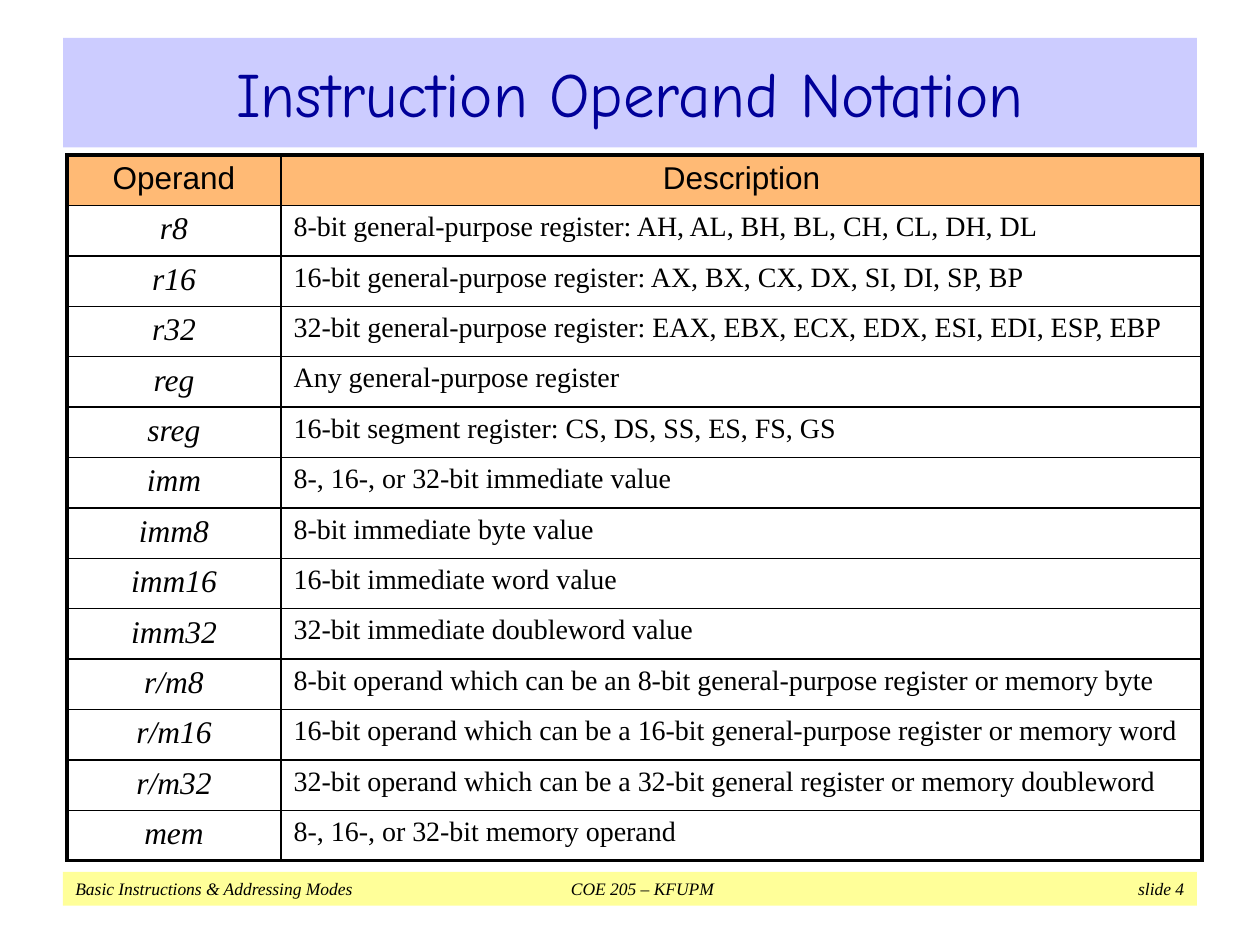
from dataclasses import dataclass
from typing import NamedTuple

from lxml.etree import SubElement
from pptx import Presentation
from pptx.dml.color import RGBColor as Color
from pptx.enum.shapes import MSO_SHAPE as ShapeKind
from pptx.enum.text import MSO_ANCHOR as Anchor, PP_ALIGN as Align
from pptx.oxml.ns import qn
from pptx.util import Pt


@dataclass(frozen=True)
class Theme:
    black: Color = Color(0x00, 0x00, 0x00)
    title_text: Color = Color(0x00, 0x00, 0x99)
    title_fill: Color = Color(0xCC, 0xCC, 0xFF)
    header_fill: Color = Color(0xFF, 0xBA, 0x75)
    footer_fill: Color = Color(0xFF, 0xFF, 0x99)
    title_font: str = "Comic Neue"
    header_font: str = "Arial"
    body_font: str = "Times New Roman"
    title_size: float = 36
    operand_size: float = 18
    description_size: float = 16
    footer_size: float = 10
    outer_line: float = 2.25
    inner_line: float = 1


class Box(NamedTuple):
    left: float
    top: float
    width: float
    height: float

    def lengths(self):
        return [Pt(value) for value in self]


class Operand(NamedTuple):
    name: str
    description: str


class TextStyle(NamedTuple):
    font: str
    size: float
    color: Color
    italic: bool = False
    align: Align = Align.LEFT


THEME = Theme()
TITLE_BOX = Box(36, 21.6, 648, 62.6)
TABLE_BOX = Box(38.2, 88.6, 648.7, 403.2)
FOOTER_BOX = Box(36, 498.2, 648, 19.4)
OPERAND_WIDTH = 122.4
FOOTER_TABS = {"ctr": 324, "r": 633.6}

TITLE_STYLE = TextStyle(THEME.title_font, THEME.title_size, THEME.title_text, align=Align.CENTER)
HEADER_STYLE = TextStyle(THEME.header_font, THEME.operand_size, THEME.black, align=Align.CENTER)
NAME_STYLE = TextStyle(THEME.body_font, THEME.operand_size, THEME.black, True, Align.CENTER)
DESCRIPTION_STYLE = TextStyle(THEME.body_font, THEME.description_size, THEME.black)
FOOTER_STYLE = TextStyle(THEME.body_font, THEME.footer_size, THEME.black, True)

HEADER = Operand("Operand", "Description")
OPERANDS = [
    Operand("r8", "8-bit general-purpose register: AH, AL, BH, BL, CH, CL, DH, DL"),
    Operand("r16", "16-bit general-purpose register: AX, BX, CX, DX, SI, DI, SP, BP"),
    Operand("r32", "32-bit general-purpose register: EAX, EBX, ECX, EDX, ESI, EDI, ESP, EBP"),
    Operand("reg", "Any general-purpose register"),
    Operand("sreg", "16-bit segment register: CS, DS, SS, ES, FS, GS"),
    Operand("imm", "8-, 16-, or 32-bit immediate value"),
    Operand("imm8", "8-bit immediate byte value"),
    Operand("imm16", "16-bit immediate word value"),
    Operand("imm32", "32-bit immediate doubleword value"),
    Operand("r/m8", "8-bit operand which can be an 8-bit general-purpose register or memory byte"),
    Operand("r/m16", "16-bit operand which can be a 16-bit general-purpose register or memory word"),
    Operand("r/m32", "32-bit operand which can be a 32-bit general register or memory doubleword"),
    Operand("mem", "8-, 16-, or 32-bit memory operand"),
]


def write_text(text_frame, text: str, style: TextStyle):
    text_frame.text = text
    paragraph = text_frame.paragraphs[0]
    paragraph.alignment = style.align
    paragraph.font.name = style.font
    paragraph.font.size = Pt(style.size)
    paragraph.font.color.rgb = style.color
    paragraph.font.bold = False
    paragraph.font.italic = style.italic
    return paragraph


def fill_solid(target, color: Color) -> None:
    target.fill.solid()
    target.fill.fore_color.rgb = color


def set_borders(cell, widths: dict[str, float]) -> None:
    """Draw cell borders; schema order puts them before the cell's fill."""
    properties = cell._tc.get_or_add_tcPr()
    for position, (side, width) in enumerate(widths.items()):
        line = SubElement(properties, qn(f"a:ln{side}"), w=str(Pt(width)))
        fill = SubElement(line, qn("a:solidFill"))
        SubElement(fill, qn("a:srgbClr"), val=str(THEME.black))
        properties.insert(position, line)


def add_title(slide) -> None:
    title = slide.shapes.title
    title.left, title.top, title.width, title.height = TITLE_BOX.lengths()
    fill_solid(title, THEME.title_fill)
    title.text_frame.vertical_anchor = Anchor.MIDDLE
    write_text(title.text_frame, "Instruction Operand Notation", TITLE_STYLE)


def add_operand_table(slide) -> None:
    rows = [HEADER, *OPERANDS]
    table = slide.shapes.add_table(len(rows), 2, *TABLE_BOX.lengths()).table
    table.first_row = table.horz_banding = False
    table.columns[0].width = Pt(OPERAND_WIDTH)
    table.columns[1].width = Pt(TABLE_BOX.width - OPERAND_WIDTH)
    last_row = len(rows) - 1
    for row_index, row in enumerate(rows):
        is_header = row_index == 0
        table.rows[row_index].height = Pt(TABLE_BOX.height / len(rows))
        styles = (HEADER_STYLE,) * 2 if is_header else (NAME_STYLE, DESCRIPTION_STYLE)
        for column_index, (text, style) in enumerate(zip(row, styles)):
            cell = table.cell(row_index, column_index)
            write_text(cell.text_frame, text, style)
            if is_header:
                fill_solid(cell, THEME.header_fill)
            else:
                cell.fill.background()
            outer_sides = {
                "L": column_index == 0,
                "R": column_index == 1,
                "T": is_header,
                "B": row_index == last_row,
            }
            set_borders(cell, {
                side: THEME.outer_line if is_outer else THEME.inner_line
                for side, is_outer in outer_sides.items()
            })


def add_footer(slide) -> None:
    footer = slide.shapes.add_shape(ShapeKind.RECTANGLE, *FOOTER_BOX.lengths())
    footer.shadow.inherit = False
    fill_solid(footer, THEME.footer_fill)
    footer.line.fill.background()
    footer.text_frame.vertical_anchor = Anchor.MIDDLE
    paragraph = write_text(
        footer.text_frame,
        "Basic Instructions & Addressing Modes\tCOE 205 – KFUPM\tslide 4",
        FOOTER_STYLE,
    )
    properties = paragraph._p.get_or_add_pPr()
    tabs = SubElement(properties, qn("a:tabLst"))
    for alignment, position in FOOTER_TABS.items():
        SubElement(tabs, qn("a:tab"), pos=str(Pt(position)), algn=alignment)
    properties.find(qn("a:defRPr")).addprevious(tabs)


def main() -> None:
    presentation = Presentation()
    presentation.slide_width, presentation.slide_height = Pt(720), Pt(540)
    slide = presentation.slides.add_slide(presentation.slide_layouts[5])
    add_footer(slide)
    add_operand_table(slide)
    add_title(slide)
    presentation.save("out.pptx")


if __name__ == "__main__":
    main()
